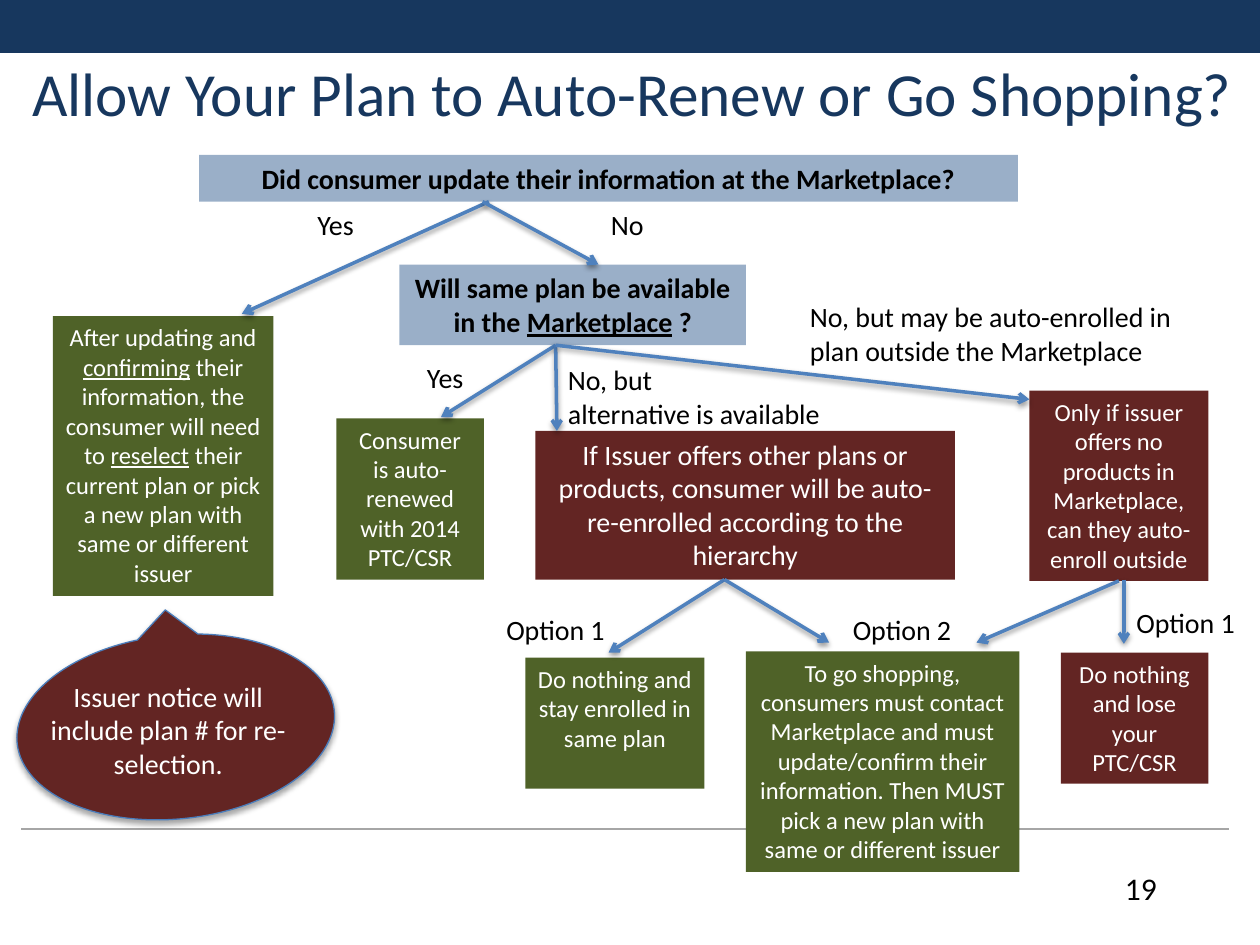
from lxml import etree
from pptx import Presentation
from pptx.dml.color import RGBColor
from pptx.enum import shapes, text
from pptx.oxml.ns import qn
from pptx.util import Inches, Pt

FONT = "Calibri"
COLORS = {
    "navy": "17375E", "question": "376092", "green": "4F6228", "maroon": "632523",
    "arrow": "4F81BD", "callout line": "4B7EBC", "rule": "A6A6A6",
    "black": "000000", "white": "FFFFFF",
}
TITLE = "Allow Your Plan to Auto-Renew or Go Shopping?"

# name: (left, top, width, height, fill, size, text); underscores enclose underlined words
BOXES = {
    "update question": (1.58, 1.23, 6.5, 0.37, "question", 16,
                        "Did consumer update their information at the Marketplace?"),
    "same plan question": (3.17, 2.1, 2.75, 0.64, "question", 16,
                           "Will same plan be available in the _Marketplace_ ?"),
    "reselect": (0.42, 2.51, 1.75, 2.22, "green", 14,
                 "After updating and _confirming_ their information, the consumer will need to "
                 "_reselect_ their current plan or pick a new plan with same or different issuer"),
    "auto-renewed": (2.67, 3.32, 1.17, 1.28, "green", 14,
                     "Consumer is auto-renewed with 2014 PTC/CSR"),
    "hierarchy": (4.25, 3.42, 3.33, 1.18, "maroon", 16,
                  "If Issuer offers other plans or products, consumer will be "
                  "auto-re-enrolled according to the hierarchy"),
    "outside": (8.17, 3.1, 1.42, 1.51, "maroon", 14,
                "Only if issuer offers no products in Marketplace, "
                "can they auto-enroll outside"),
    "stay enrolled": (4.17, 5.22, 1.42, 1.04, "green", 14,
                      "Do nothing and stay enrolled in same plan"),
    "go shopping": (5.92, 5.17, 2.17, 1.75, "green", 14,
                    "To go shopping, consumers must contact Marketplace and must update/confirm "
                    "their information. Then MUST pick a new plan with same or different issuer"),
    "lose credit": (8.42, 5.18, 1.17, 1.04, "maroon", 14,
                    "Do nothing and lose your PTC/CSR"),
}

# left, top, width, height, text
LABELS = [
    (2.42, 1.6, 0.75, 0.37, "Yes"),
    (4.75, 1.6, 0.75, 0.37, "No"),
    (3.29, 2.81, 0.75, 0.37, "Yes"),
    (4.41, 2.83, 2.26, 0.64, "No, but\nalternative is available"),
    (6.33, 2.33, 3.17, 0.64, "No, but may be auto-enrolled in plan outside the Marketplace"),
    (3.92, 4.81, 1.5, 0.37, "Option 1"),
    (6.67, 4.81, 1.5, 0.37, "Option 2"),
    (8.92, 4.76, 1.08, 0.37, "Option 1"),
]

# start x, start y, end x, end y, box whose bottom middle is the start
ARROWS = [
    (3.88, 1.6, 1.92, 2.49, None),
    (3.83, 1.6, 4.75, 2.1, None),
    (4.41, 2.74, 3.5, 3.31, None),
    (4.41, 2.74, 4.42, 3.42, None),
    (4.41, 2.74, 8.17, 3.17, None),
    (5.75, 4.6, 4.83, 5.18, None),
    (5.75, 4.6, 6.58, 5.1, None),
    (8.88, 4.61, 7.75, 5.1, "outside"),
    (8.92, 4.6, 8.92, 5.11, None),
]


def color(name):
    return RGBColor.from_string(COLORS[name])


def set_font(font, size, color_name, bold=None):
    font.name, font.size, font.bold = FONT, Pt(size), bold
    font.color.rgb = color(color_name)


def write(shape, content, size, color_name, align=text.PP_ALIGN.LEFT, bold=None):
    """Fill a shape with wrapped text from the top, one paragraph per line."""
    frame = shape.text_frame
    frame.word_wrap = True
    frame.vertical_anchor = text.MSO_ANCHOR.TOP
    frame.auto_size = text.MSO_AUTO_SIZE.SHAPE_TO_FIT_TEXT
    for number, line in enumerate(content.split("\n")):
        paragraph = frame.add_paragraph() if number else frame.paragraphs[0]
        paragraph.alignment = align
        set_font(paragraph.font, size, color_name, bold)
        for index, part in enumerate(line.split("_")):
            run = paragraph.add_run()
            run.text = part
            if index % 2:
                run.font.underline = True


def add_shadow(shape, blur, distance, opacity):
    properties = shape._element.spPr
    effects = etree.SubElement(properties, qn("a:effectLst"))
    shadow = etree.SubElement(effects, qn("a:outerShdw"), blurRad=str(Pt(blur)),
                              dist=str(Pt(distance)), dir="5400000", rotWithShape="0")
    shade = etree.SubElement(shadow, qn("a:srgbClr"), val=COLORS["black"])
    etree.SubElement(shade, qn("a:alpha"), val=str(opacity * 1000))


def add_filled(slide, kind, place, fill):
    shape = slide.shapes.add_shape(kind, *map(Inches, place))
    shape.fill.solid()
    shape.fill.fore_color.rgb = color(fill)
    shape.line.fill.background()
    return shape


def add_line(slide, ends, color_name, width):
    line = slide.shapes.add_connector(shapes.MSO_CONNECTOR.STRAIGHT, *map(Inches, ends))
    line.line.color.rgb = color(color_name)
    line.line.width = Pt(width)
    return line


def add_label(slide, place, content, size=16, color_name="black", align=text.PP_ALIGN.LEFT):
    label = slide.shapes.add_textbox(*map(Inches, place))
    write(label, content, size, color_name, align)


def add_frame(slide):
    bar = add_filled(slide, shapes.MSO_SHAPE.RECTANGLE, (0, 0, 10, 0.42), "navy")
    bar.shadow.inherit = False
    rule = add_line(slide, (0.17, 6.58, 9.75, 6.58), "rule", 0.75)
    etree.SubElement(rule._element.spPr, qn("a:effectLst"))

    title = slide.shapes.title
    title.left, title.top, title.width, title.height = map(Inches, (0.02, 0.2, 10, 1.13))
    title.text_frame.text = TITLE
    title.text_frame.vertical_anchor = text.MSO_ANCHOR.MIDDLE
    paragraph = title.text_frame.paragraphs[0]
    paragraph.alignment = text.PP_ALIGN.CENTER
    paragraph.line_spacing = 0.9
    set_font(paragraph.font, 35, "navy")
    add_label(slide, (8.83, 6.85, 0.67, 0.4), "19", 18)


def add_box(slide, *place, fill, size, content):
    box = add_filled(slide, shapes.MSO_SHAPE.RECTANGLE, place, fill)
    box.shadow.inherit = False
    is_question = fill == "question"
    if is_question:
        shade = box._element.spPr.find(qn("a:solidFill")).find(qn("a:srgbClr"))
        etree.SubElement(shade, qn("a:alpha"), val="50000")
    write(box, content, size, "black" if is_question else "white",
          text.PP_ALIGN.CENTER, is_question)
    return box


def add_callout(slide):
    callout = add_filled(slide, shapes.MSO_SHAPE.OVAL_CALLOUT, (0.13, 5.04, 2.53, 1.46), "maroon")
    callout.rotation = 354.1
    callout.adjustments[0], callout.adjustments[1] = 0.005, -0.639
    callout.line.color.rgb = color("callout line")
    callout.line.width = Pt(0.75)
    add_shadow(callout, 3.1, 1.8, 35)
    add_label(slide, (0.21, 5.34, 2.25, 0.91),
              "Issuer notice will include plan # for re-selection.",
              color_name="white", align=text.PP_ALIGN.CENTER)


def main():
    presentation = Presentation()
    presentation.slide_width, presentation.slide_height = Inches(10), Inches(7.5)
    slide = presentation.slides.add_slide(presentation.slide_layouts[5])
    add_frame(slide)
    boxes = {name: add_box(slide, *place, fill=fill, size=size, content=content)
             for name, (*place, fill, size, content) in BOXES.items()}
    for *place, content in LABELS:
        add_label(slide, place, content)
    for *ends, start in ARROWS:
        arrow = add_line(slide, ends, "arrow", 2)
        etree.SubElement(arrow.line._get_or_add_ln(), qn("a:tailEnd"), type="arrow")
        add_shadow(arrow, 3.1, 1.6, 38)
        if start:
            arrow.begin_connect(boxes[start], 2)
    add_callout(slide)
    presentation.save("out.pptx")


if __name__ == "__main__":
    main()
